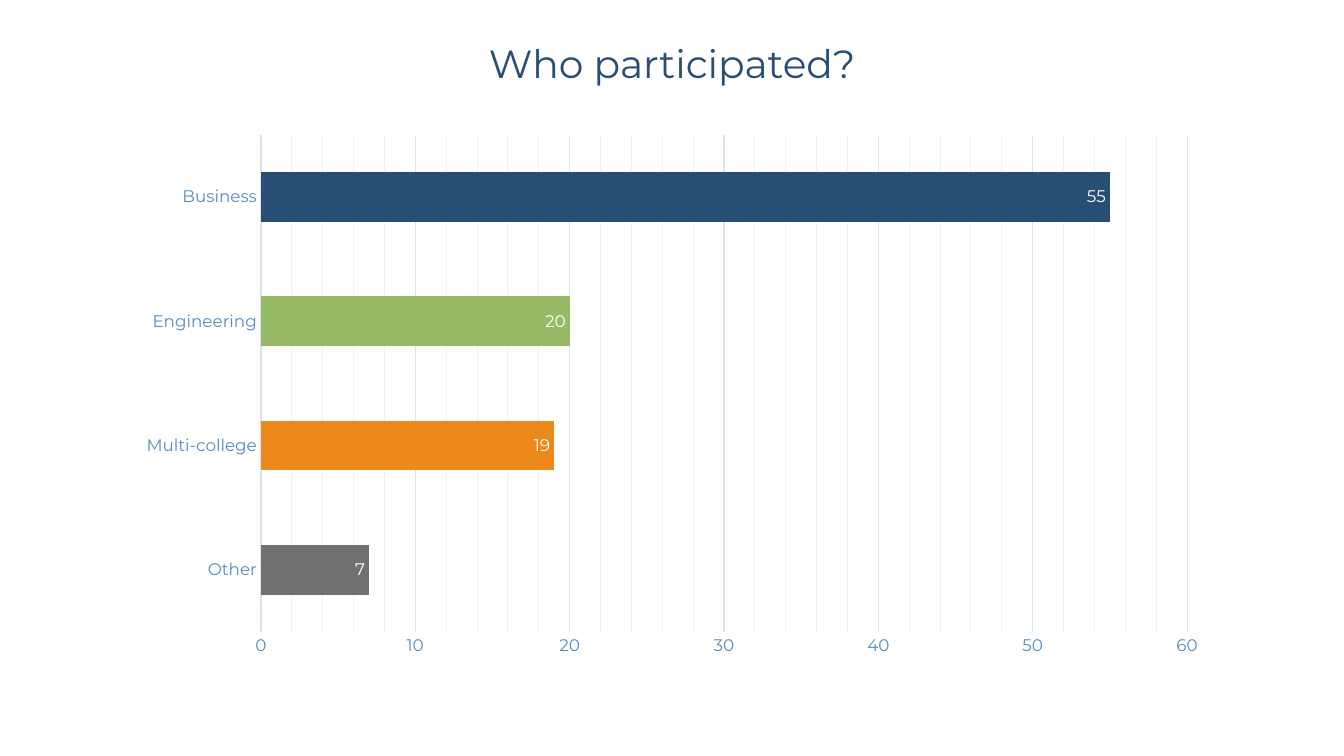
"""Build a slide with a bar chart of participants by college."""
from copy import deepcopy

from lxml import etree
from pptx import Presentation, util as u
from pptx.chart.data import CategoryChartData
from pptx.dml.color import RGBColor
from pptx.enum import chart as ch, text
from pptx.oxml import ns

FONT = "Montserrat"
NAVY, SKY, PALE, FAINT = "294E73", "558CC3", "D8E4F1", "F2F2F2"
participants = [
    ("Other", 7, "717171"),
    ("Multi-college", 19, "EB891C"),
    ("Engineering", 20, "96BA65"),
    ("Business", 55, NAVY),
]


def paint(target, color):
    """Give a fill or line format a solid colour."""
    target.fill.solid()
    target.fill.fore_color.rgb = RGBColor.from_string(color)


def write(frame, words="", size=12, color=SKY, align=text.PP_ALIGN.CENTER):
    """Set words in a text frame, or only the font of a chart part."""
    if words:
        frame.text = words
        frame.paragraphs[0].alignment = align
        frame = frame.paragraphs[0]
    frame.font.name, frame.font.size = FONT, u.Pt(size)
    frame.font.color.rgb = RGBColor.from_string(color)


prs = Presentation()
prs.slide_width, prs.slide_height = u.Inches(13.33), u.Inches(7.5)
slide = prs.slides.add_slide(prs.slide_layouts[6])

data = CategoryChartData()
data.categories = [college for college, _, _ in participants]
data.add_series("Series 1", [count for _, count, _ in participants])
turnout = slide.shapes.add_chart(
    ch.XL_CHART_TYPE.BAR_STACKED, u.Inches(1.23), u.Inches(1.23),
    u.Inches(10.87), u.Inches(5.39), data).chart
turnout.has_legend = turnout.has_title = False
write(turnout, size=10, color=NAVY)

bars = turnout.plots[0]
bars.gap_width, bars.overlap, bars.vary_by_categories = 150, 100, False
counts = bars.series[0]
paint(counts.format, NAVY)
for row, (_, _, color) in enumerate(participants):
    paint(counts.points[row].format, color)
labels = counts.data_labels
labels.show_value = True
labels.position = ch.XL_LABEL_POSITION.INSIDE_END
write(labels, color="FFFFFF")

colleges, scale = turnout.category_axis, turnout.value_axis
for axis in (colleges, scale):
    axis.major_tick_mark = axis.minor_tick_mark = ch.XL_TICK_MARK.NONE
    write(axis.tick_labels)
colleges.has_major_gridlines = False
scale.has_major_gridlines = scale.has_minor_gridlines = True
scale.minimum_scale, scale.maximum_scale = 0, 60
scale.major_unit, scale.minor_unit = 10, 2
scale.format.line.fill.background()
for rule in (colleges.format.line, scale.major_gridlines.format.line):
    paint(rule, PALE)
    rule.width = u.Pt(0.75)

plot_area = turnout.element.find(f".//{ns.qn('c:plotArea')}")
major = plot_area.find(f".//{ns.qn('c:majorGridlines')}")
minor = plot_area.find(f".//{ns.qn('c:minorGridlines')}")
minor.append(deepcopy(major.find(ns.qn("c:spPr"))))
minor.find(f".//{ns.qn('a:srgbClr')}").set("val", FAINT)

for old in plot_area.findall(ns.qn("c:layout")):
    plot_area.remove(old)
layout = etree.Element(ns.qn("c:layout"))
manual = etree.SubElement(layout, ns.qn("c:manualLayout"))
for tag, value in (("layoutTarget", "inner"), ("xMode", "edge"), ("yMode", "edge"),
                   ("x", 0.125), ("y", 0.02), ("w", 0.845), ("h", 0.915)):
    etree.SubElement(manual, ns.qn(f"c:{tag}"), val=str(value))
plot_area.insert(0, layout)

title = slide.shapes.add_textbox(
    prs.slide_width // 4, u.Inches(0.34), prs.slide_width // 2, u.Inches(0.57))
title.text_frame.word_wrap = True
write(title.text_frame, "Who participated?", size=28, color=NAVY)

prs.save("out.pptx")
